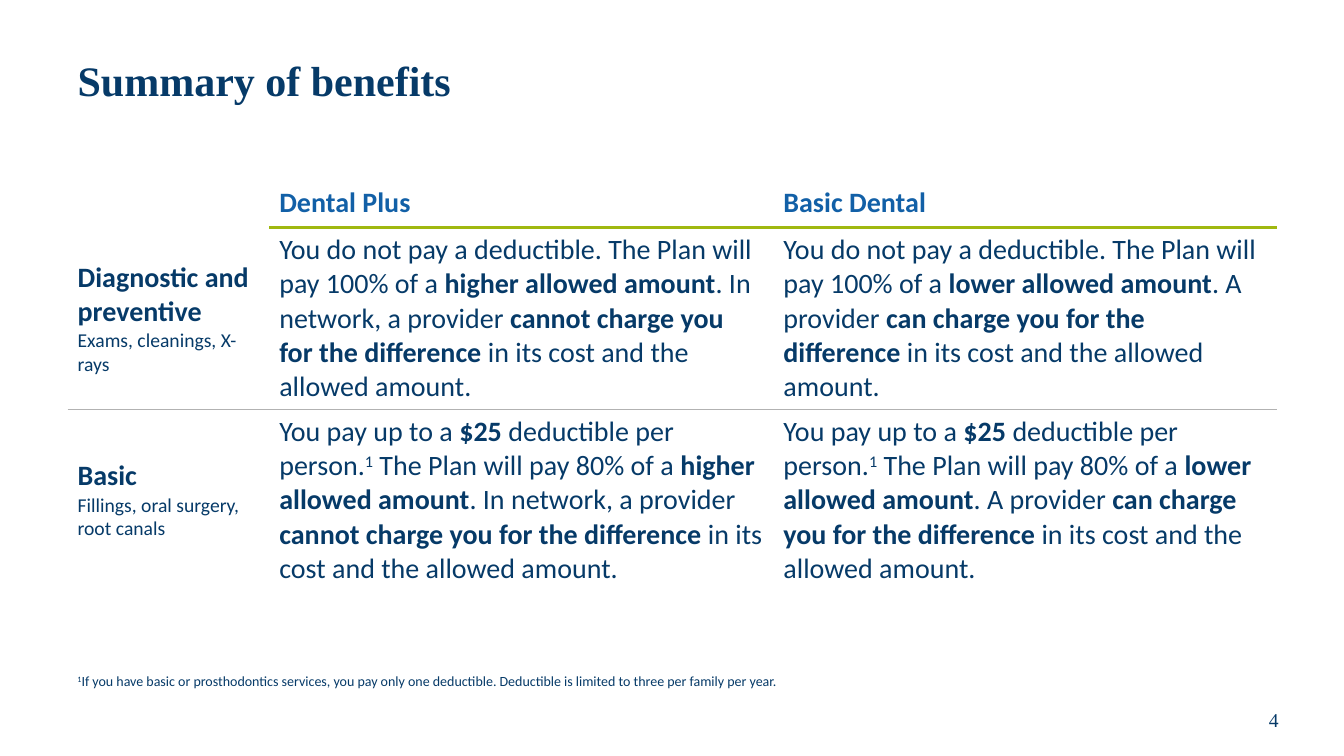
"""Build the summary of dental benefits slide."""
from lxml import etree
from pptx import Presentation
from pptx.dml.color import RGBColor
from pptx.enum.text import MSO_ANCHOR, MSO_AUTO_SIZE, PP_ALIGN
from pptx.oxml.ns import qn
from pptx.util import Inches, Pt

MIDDLE = MSO_ANCHOR.MIDDLE
LEFT, CENTER = PP_ALIGN.LEFT, PP_ALIGN.CENTER
NO_STYLE_NO_GRID = "{2D5ABB26-0587-4C30-8999-92F81FD0307C}"
THEME = {
    "navy": "063A68", "blue": "1260A7", "green": "A0B810", "gray": "B2B2B2",
    "heading": "Times New Roman", "body": "Calibri",
    "title": 30, "text": 20, "detail": 14, "number": 14, "note": 10,
}


def write(paragraph, text, size, color="navy", font="body", bold=None):
    """Fill a paragraph, with *bold* and ^superscript^ marks in the text."""
    paragraph.font.name = THEME[font]
    paragraph.font.size = Pt(THEME[size])
    paragraph.font.color.rgb = RGBColor.from_string(THEME[color])
    paragraph.font.bold = bold
    for bold_index, part in enumerate(text.split("*")):
        for raised_index, piece in enumerate(part.split("^")):
            if piece:
                run = paragraph.add_run()
                run.text = piece
                if bold_index % 2:
                    run.font.bold = True
                if raised_index % 2:
                    run.font._element.set("baseline", "30000")


def add_border(cell, side, color, width):
    """Draw one edge of a table cell."""
    line = etree.Element(qn(f"a:{side}"), w=str(Pt(width)))
    fill = etree.SubElement(line, qn("a:solidFill"))
    etree.SubElement(fill, qn("a:srgbClr"), val=THEME[color])
    properties = cell._tc.get_or_add_tcPr()
    properties.insert(len(properties.findall(qn("a:lnT"))), line)


presentation = Presentation()
presentation.slide_width = Inches(13.33)
presentation.slide_height = Inches(7.5)
slide = presentation.slides.add_slide(presentation.slide_layouts[5])

title = slide.shapes.title
title.left, title.top = Inches(0.67), Inches(0.25)
title.width, title.height = Inches(12), Inches(1.15)
title.text_frame.vertical_anchor = MIDDLE
title.text_frame.auto_size = MSO_AUTO_SIZE.NONE
title_paragraph = title.text_frame.paragraphs[0]
title_paragraph.alignment = LEFT
title_paragraph.line_spacing = 0.9
write(title_paragraph, "Summary of benefits", "title", font="heading", bold=True)

plans = ["Dental Plus", "Basic Dental"]
benefits = [
    ("Diagnostic and preventive", "Exams, cleanings, X-rays",
     "You do not pay a deductible. The Plan will pay 100% of a *higher allowed amount*. "
     "In network, a provider *cannot charge you for the difference *in its cost and the allowed amount.",
     "You do not pay a deductible. The Plan will pay 100% of a *lower allowed amount*. "
     "A provider *can charge you for the difference* in its cost and the allowed amount."),
    ("Basic", "Fillings, oral surgery, root canals",
     "You pay up to a *$25 *deductible per person.^1^ The Plan will pay 80% of a *higher allowed amount*. "
     "In network, a provider *cannot charge you for the difference *in its cost and the allowed amount.",
     "You pay up to a *$25 *deductible per person.^1^ The Plan will pay 80% of a *lower allowed amount*. "
     "A provider *can charge you for the difference *in its cost and the allowed amount."),
]

table = slide.shapes.add_table(
    3, 3, Inches(0.67), Inches(1.76), Inches(12), Inches(4.03)).table
table.first_row = table.horz_banding = False
table._tbl.tblPr.find(qn("a:tableStyleId")).text = NO_STYLE_NO_GRID
for column, width in zip(table.columns, (2, 5, 5)):
    column.width = Inches(width)
for row, height in zip(table.rows, (0.5, 1.76, 1.76)):
    row.height = Inches(height)
for cell in table.iter_cells():
    cell.fill.background()
    cell.vertical_anchor = MIDDLE

for column_index, plan in enumerate(plans, 1):
    header = table.cell(0, column_index)
    write(header.text_frame.paragraphs[0], plan, "text", "blue", bold=True)
    add_border(header, "lnB", "green", 2.25)
    add_border(table.cell(1, column_index), "lnT", "green", 2.25)

for row_index, (service, examples, *coverages) in enumerate(benefits, 1):
    service_frame = table.cell(row_index, 0).text_frame
    write(service_frame.paragraphs[0], service, "text", bold=True)
    write(service_frame.add_paragraph(), examples, "detail")
    for column_index, coverage in enumerate(coverages, 1):
        write(table.cell(row_index, column_index).text_frame.paragraphs[0], coverage, "text")

for column_index in range(3):
    add_border(table.cell(1, column_index), "lnB", "gray", 0.5)
    add_border(table.cell(2, column_index), "lnT", "gray", 0.5)

footnote = slide.shapes.add_textbox(Inches(0.67), Inches(6.62), Inches(12), Inches(0.27))
footnote.text_frame.word_wrap = True
footnote.text_frame.auto_size = MSO_AUTO_SIZE.SHAPE_TO_FIT_TEXT
write(footnote.text_frame.paragraphs[0],
      "^1^If you have basic or prosthodontics services, you pay only one deductible. "
      "Deductible is limited to three per family per year.", "note")

page_number = slide.shapes.add_textbox(Inches(12.05), Inches(6.89), Inches(1.17), Inches(0.5))
page_number.text_frame.word_wrap = True
page_number.text_frame.vertical_anchor = MIDDLE
page_number.text_frame.paragraphs[0].alignment = CENTER
write(page_number.text_frame.paragraphs[0], "4", "number", font="heading")

presentation.save("out.pptx")
